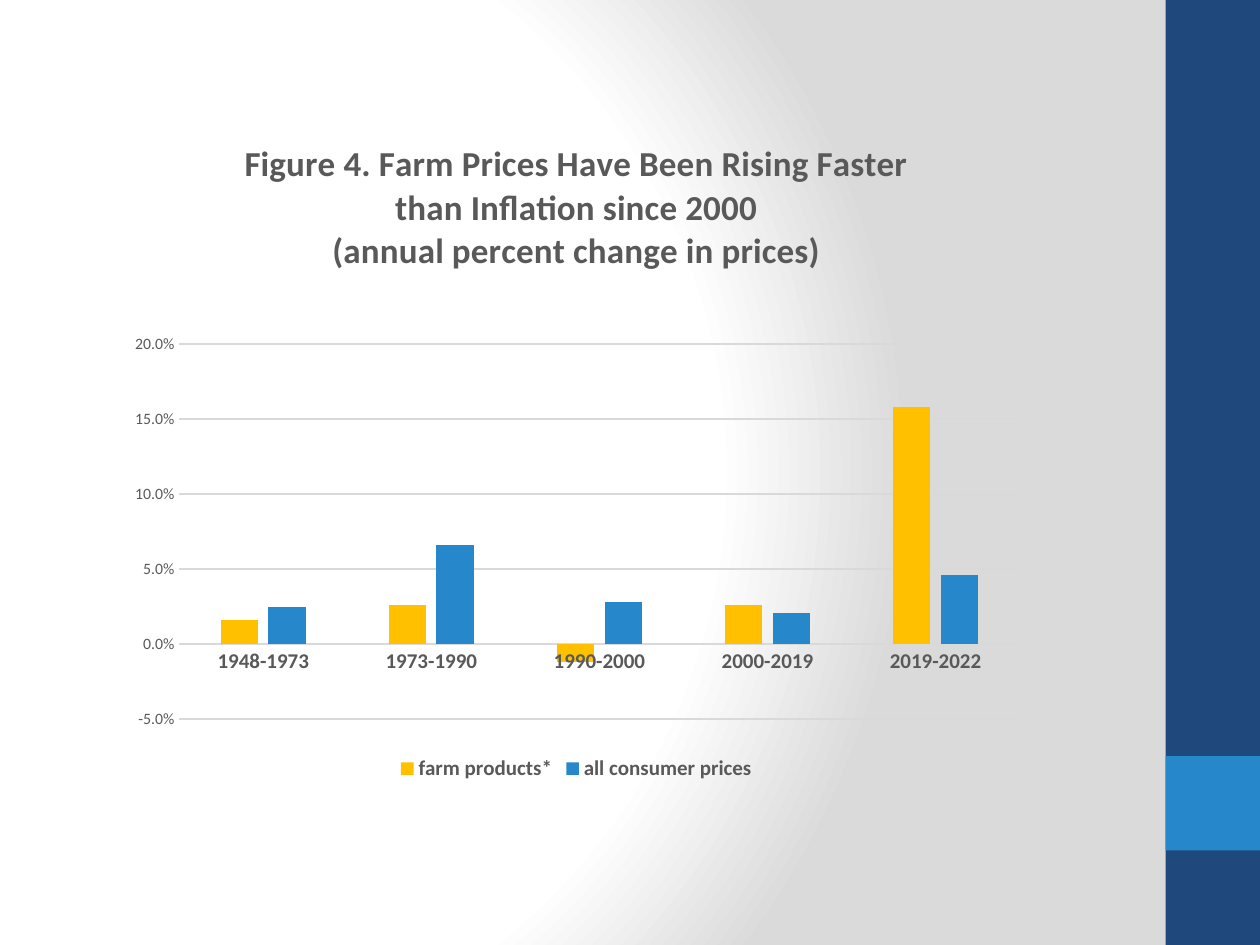
from pptx import Presentation
from pptx.chart.data import CategoryChartData
from pptx.dml.color import RGBColor
from pptx.enum.chart import XL_CHART_TYPE, XL_LEGEND_POSITION, XL_TICK_MARK
from pptx.enum.shapes import MSO_SHAPE
from pptx.oxml import parse_xml
from pptx.oxml.ns import nsdecls, qn
from pptx.util import Inches, Pt

NAVY = RGBColor(0x1F, 0x49, 0x7D)
BLUE = RGBColor(0x26, 0x88, 0xCB)
GOLD = RGBColor(0xFF, 0xC0, 0x00)
GREY_TEXT = RGBColor(0x59, 0x59, 0x59)
GRID_GREY = RGBColor(0xD9, 0xD9, 0xD9)
SHADE = RGBColor(0xDA, 0xDA, 0xDA)
WHITE = RGBColor(0xFF, 0xFF, 0xFF)

PERIODS = ["1948-1973", "1973-1990", "1990-2000", "2000-2019", "2019-2022"]
PRICE_CHANGES = [
    ("farm products*", GOLD, [0.016, 0.026, -0.012, 0.026, 0.158]),
    ("all consumer prices", BLUE, [0.025, 0.066, 0.028, 0.021, 0.046]),
]
TITLE_LINES = [
    "Figure 4. Farm Prices Have Been Rising Faster than Inflation since 2000",
    "(annual percent change in prices)",
]


class SlideBuilder:
    """Holds the style and the slide; boxes are shares of the slide's size."""

    font_name = "Calibri"

    def __init__(self, presentation):
        self.width = presentation.slide_width
        self.height = presentation.slide_height
        self.slide = presentation.slides.add_slide(presentation.slide_layouts[6])

    def box(self, left, top, width, height):
        return (round(left * self.width), round(top * self.height),
                round(width * self.width), round(height * self.height))

    def style_font(self, font, size, bold=False):
        font.name = self.font_name
        font.size = Pt(size)
        font.bold = bold
        font.color.rgb = GREY_TEXT

    def style_line(self, line):
        line.color.rgb = GRID_GREY
        line.width = Pt(0.75)

    def background(self, stops, left, top, right, bottom):
        """Fill with a circular gradient; stops and focus are percentages."""
        fill = self.slide.background.fill
        fill.gradient()
        old_gradient = self.slide.background._cSld.find(".//" + qn("a:gradFill"))
        stop_xml = "".join(
            f'<a:gs pos="{position * 1000}"><a:srgbClr val="{color}"/></a:gs>'
            for position, color in stops)
        gradient = parse_xml(
            f'<a:gradFill {nsdecls("a")} rotWithShape="1"><a:gsLst>{stop_xml}</a:gsLst>'
            f'<a:path path="circle"><a:fillToRect l="{left * 1000}" t="{top * 1000}" '
            f'r="{right * 1000}" b="{bottom * 1000}"/></a:path></a:gradFill>')
        old_gradient.getparent().replace(old_gradient, gradient)

    def block(self, color, *shares):
        shape = self.slide.shapes.add_shape(MSO_SHAPE.RECTANGLE, *self.box(*shares))
        shape.shadow.inherit = False
        shape.fill.solid()
        shape.fill.fore_color.rgb = color
        shape.line.fill.background()

    def column_chart(self, categories, series_rows, *shares):
        data = CategoryChartData(number_format="0.0%")
        data.categories = categories
        for name, _, values in series_rows:
            data.add_series(name, values)
        chart = self.slide.shapes.add_chart(
            XL_CHART_TYPE.COLUMN_CLUSTERED, *self.box(*shares), data).chart
        self.style_font(chart.font, 10)
        plot = chart.plots[0]
        plot.gap_width = 219
        plot.overlap = -27
        plot.vary_by_categories = False
        for series, (_, color, _) in zip(plot.series, series_rows):
            series.invert_if_negative = False
            series.format.fill.solid()
            series.format.fill.fore_color.rgb = color
        self.style_axes(chart)
        chart.has_legend = True
        chart.legend.position = XL_LEGEND_POSITION.BOTTOM
        chart.legend.include_in_layout = False
        self.style_font(chart.legend.font, 12, bold=True)
        return chart

    def style_axes(self, chart):
        category_axis, value_axis = chart.category_axis, chart.value_axis
        for axis, size, bold in ((category_axis, 12, True), (value_axis, 9, False)):
            axis.major_tick_mark = axis.minor_tick_mark = XL_TICK_MARK.NONE
            self.style_font(axis.tick_labels.font, size, bold)
        self.style_line(category_axis.format.line)
        value_axis.format.line.fill.background()
        value_axis.has_major_gridlines = True
        self.style_line(value_axis.major_gridlines.format.line)
        value_axis.minimum_scale = -0.05
        value_axis.maximum_scale = 0.2
        value_axis.major_unit = 0.05
        value_axis.tick_labels.number_format = "0.0%"
        value_axis.tick_labels.number_format_is_linked = False

    def chart_title(self, chart, lines):
        chart.has_title = True
        chart.chart_title.include_in_layout = False
        frame = chart.chart_title.text_frame
        for index, line in enumerate(lines):
            paragraph = frame.add_paragraph() if index else frame.paragraphs[0]
            self.style_font(paragraph.font, 20, bold=True)
            run = paragraph.add_run()
            run.text = line
            self.style_font(run.font, 20, bold=True)

    def place_plot(self, chart, **shares):
        """Fix the inner plot area at x, y, w, h as shares of the chart."""
        plot_area = chart._chartSpace.find(".//" + qn("c:plotArea"))
        for layout in plot_area.findall(qn("c:layout")):
            plot_area.remove(layout)
        modes = '<c:xMode val="edge"/><c:yMode val="edge"/>'
        sizes = "".join(f'<c:{key} val="{share}"/>' for key, share in shares.items())
        plot_area.insert(0, parse_xml(
            f'<c:layout {nsdecls("c")}><c:manualLayout><c:layoutTarget val="inner"/>'
            f'{modes}{sizes}</c:manualLayout></c:layout>'))


def main():
    presentation = Presentation()
    presentation.slide_width = Inches(10)
    presentation.slide_height = Inches(7.5)
    builder = SlideBuilder(presentation)
    builder.background([(0, WHITE), (75, WHITE), (100, SHADE)], 20, 50, 100, 50)
    builder.block(NAVY, 0.925, 0, 0.075, 1)
    builder.block(BLUE, 0.925, 0.8, 0.075, 0.1)
    chart = builder.column_chart(PERIODS, PRICE_CHANGES, 0.091, 0.123, 0.733, 0.709)
    builder.chart_title(chart, TITLE_LINES)
    builder.place_plot(chart, x=0.07, y=0.34, w=0.91, h=0.56)
    presentation.save("out.pptx")


if __name__ == "__main__":
    main()
